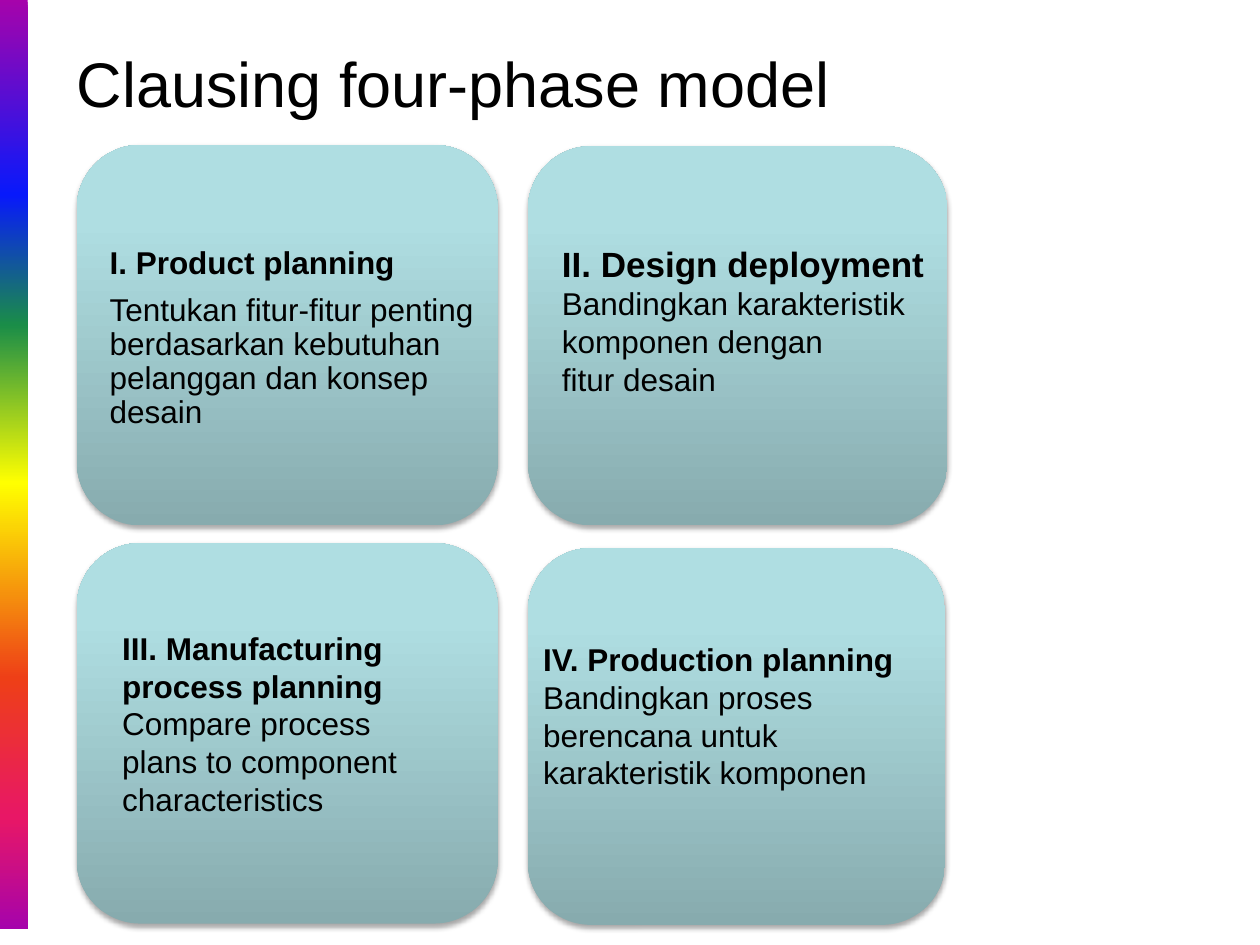
from lxml.etree import SubElement
from pptx import Presentation
from pptx.dml.color import RGBColor
from pptx.enum.shapes import MSO_SHAPE as Shape
from pptx.enum.text import MSO_ANCHOR as Anchor
from pptx.oxml.ns import qn
from pptx.util import Inches, Pt

BLACK = RGBColor(0x00, 0x00, 0x00)
PURPLE = RGBColor(0xA6, 0x03, 0xAB)
BLUE = RGBColor(0x08, 0x19, 0xFB)
GREEN = RGBColor(0x1A, 0x8D, 0x48)
YELLOW = RGBColor(0xFF, 0xFF, 0x00)
ORANGE = RGBColor(0xEE, 0x3F, 0x17)
PINK = RGBColor(0xE8, 0x17, 0x66)
TEAL_DARK = RGBColor(0x87, 0xAB, 0xAE)
TEAL = RGBColor(0xAF, 0xDE, 0xE2)
TEAL_LIGHT = RGBColor(0xAF, 0xE0, 0xE4)

RAINBOW = [(0, PURPLE), (21, BLUE), (35, GREEN), (52, YELLOW),
           (73, ORANGE), (88, PINK), (100, PURPLE)]
TEAL_FADE = [(0, TEAL_DARK), (80, TEAL), (100, TEAL_LIGHT)]

TITLE = "Clausing four-phase model"
TIGHT = {"line_spacing": 0.9, "space_after": Pt(7)}
PHASES = [
    {"panel": (0.61, 1.15, 3.34, 3.02), "text": (0.76, 1.29, 3.15, 2.8),
     "heading": "I. Product planning", "size": 18, "lift": 0, "spacing": TIGHT,
     "body": ["Tentukan fitur-fitur penting berdasarkan kebutuhan pelanggan dan konsep desain"]},
    {"panel": (4.19, 1.16, 3.33, 3.01), "text": (4.35, 1.29, 3.15, 2.8),
     "heading": "II. Design deployment", "size": 20, "lift": 0.15, "spacing": {},
     "body": ["Bandingkan karakteristik komponen dengan", "fitur desain"]},
    {"panel": (0.61, 4.31, 3.34, 3.02), "text": (0.86, 4.58, 2.9, 2.58),
     "heading": "III. Manufacturing process planning", "size": 18, "lift": 0.13, "spacing": {},
     "body": ["Compare process", "plans to component characteristics"]},
    {"panel": (4.19, 4.35, 3.31, 2.99), "text": (4.2, 4.58, 3.15, 2.8),
     "heading": "IV. Production planning", "size": 18, "lift": 0.3, "spacing": {},
     "body": ["Bandingkan proses", "berencana untuk karakteristik komponen"]},
]


def apply(target, values):
    for name, value in values.items():
        setattr(target, name, value)


def add_gradient_shape(page, kind, area, stops, angle):
    shape = page.shapes.add_shape(kind, *map(Inches, area))
    shape.shadow.inherit = False
    shape.line.fill.background()
    shape.fill.gradient()
    shape.fill.gradient_angle = angle
    stop_list = shape.element.spPr.find(qn("a:gradFill")).find(qn("a:gsLst"))
    for old in list(stop_list):
        stop_list.remove(old)
    for position, colour in stops:
        stop = SubElement(stop_list, qn("a:gs"), pos=str(position * 1000))
        SubElement(stop, qn("a:srgbClr"), val=str(colour))
    return shape


def add_shadow(shape):
    effects = shape.element.spPr.find(qn("a:effectLst"))
    shadow = SubElement(effects, qn("a:outerShdw"), blurRad=str(Pt(3.1)),
                        dist=str(Pt(1.8)), dir="5400000", rotWithShape="0")
    colour = SubElement(shadow, qn("a:srgbClr"), val=str(BLACK))
    SubElement(colour, qn("a:alpha"), val="35000")


def add_text(page, area, lines, spacing, lift=0):
    box = page.shapes.add_textbox(*map(Inches, area))
    frame = box.text_frame
    apply(frame, {"word_wrap": True, "vertical_anchor": Anchor.MIDDLE,
                  "margin_left": Inches(0.11), "margin_right": Inches(0.11),
                  "margin_top": Inches(0.05), "margin_bottom": Inches(0.05 + 2 * lift)})
    for index, (text, size, bold) in enumerate(lines):
        para = frame.add_paragraph() if index else frame.paragraphs[0]
        apply(para, spacing)
        span = para.add_run()
        span.text = text
        apply(span.font, {"name": "Arial", "size": Pt(size), "bold": bold})
        span.font.color.rgb = BLACK


def main():
    deck = Presentation()
    apply(deck, {"slide_width": Inches(10), "slide_height": Inches(7.5)})
    page = deck.slides.add_slide(deck.slide_layouts[6])
    add_gradient_shape(page, Shape.RECTANGLE, (0, 0, 0.22, 7.37), RAINBOW, 270)
    add_text(page, (0.5, 0.3, 9, 0.7), [(TITLE, 36, False)], {})
    for phase in PHASES:
        add_shadow(add_gradient_shape(page, Shape.ROUNDED_RECTANGLE,
                                      phase["panel"], TEAL_FADE, 90))
        lines = [(phase["heading"], phase["size"], True)]
        lines += [(text, 18, False) for text in phase["body"]]
        add_text(page, phase["text"], lines, phase["spacing"], phase["lift"])
    deck.save("out.pptx")


if __name__ == "__main__":
    main()
